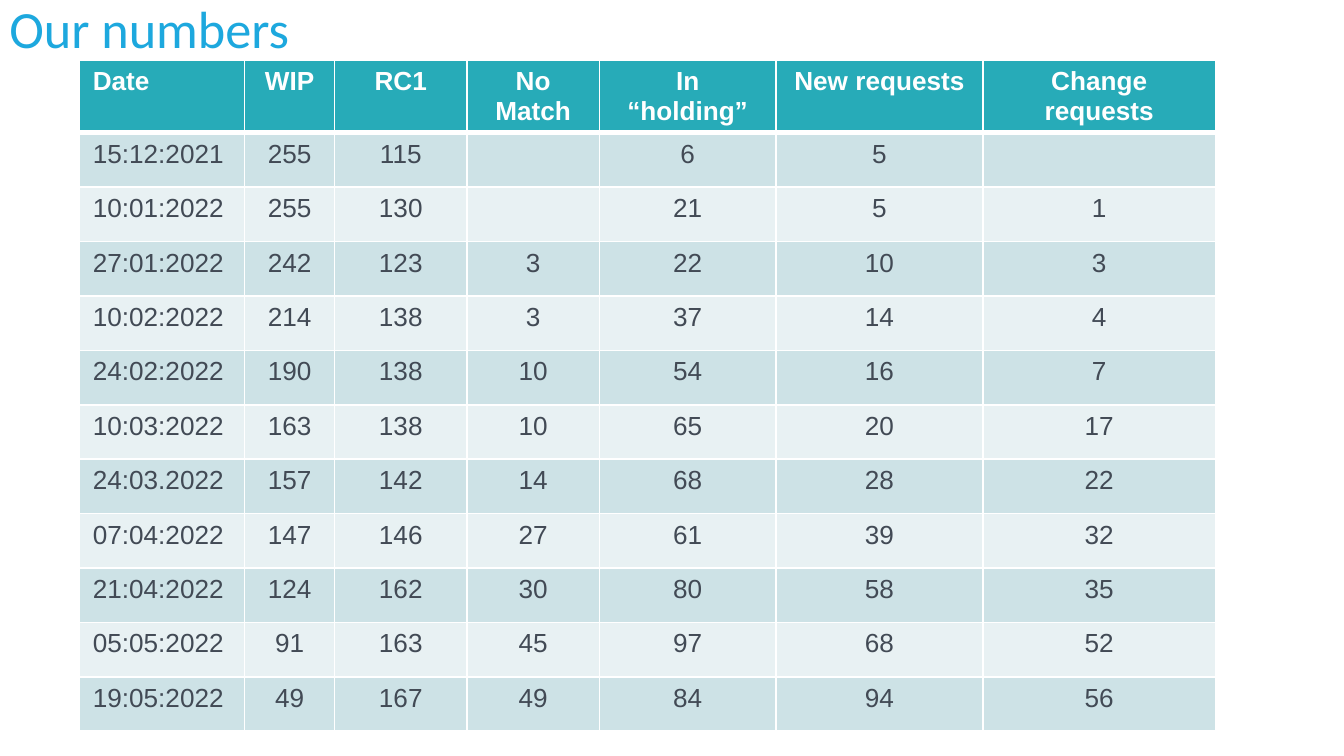
import pptx
import pptx.dml.color
import pptx.enum.text
import pptx.oxml
import pptx.oxml.ns
import pptx.util

COLORS = {
    "title": "1DA8DE",
    "header": "27ABB8",
    "odd": "CDE2E6",
    "even": "E8F1F3",
    "text": "424A55",
    "white": "FFFFFF",
}
HEADINGS = ["Date", "WIP", "RC1", "No Match", "In “holding”", "New requests", "Change requests"]
COUNTS = [
    ["15:12:2021", 255, 115, "", 6, 5, ""],
    ["10:01:2022", 255, 130, "", 21, 5, 1],
    ["27:01:2022", 242, 123, 3, 22, 10, 3],
    ["10:02:2022", 214, 138, 3, 37, 14, 4],
    ["24:02:2022", 190, 138, 10, 54, 16, 7],
    ["10:03:2022", 163, 138, 10, 65, 20, 17],
    ["24:03.2022", 157, 142, 14, 68, 28, 22],
    ["07:04:2022", 147, 146, 27, 61, 39, 32],
    ["21:04:2022", 124, 162, 30, 80, 58, 35],
    ["05:05:2022", 91, 163, 45, 97, 68, 52],
    ["19:05:2022", 49, 167, 49, 84, 94, 56],
]
COLUMN_SHARES = [0.123, 0.067, 0.0985, 0.0985, 0.1315, 0.154, 0.173]
ROW_SHARE = 0.072


def write(para, text, color, **formats):
    span = para.add_run()
    span.text = str(text)
    for name, value in formats.items():
        setattr(span.font, name, value)
    span.font.color.rgb = pptx.dml.color.RGBColor.from_string(COLORS[color])


def add_border(cell, side, points):
    line = pptx.oxml.parse_xml(
        f'<a:ln{side} {pptx.oxml.ns.nsdecls("a")} w="{pptx.util.Pt(points)}">'
        f'<a:solidFill><a:srgbClr val="{COLORS["white"]}"/></a:solidFill></a:ln{side}>'
    )
    cell._tc.get_or_add_tcPr().append(line)


deck = pptx.Presentation()
deck.slide_width = pptx.util.Inches(10)
deck.slide_height = deck.slide_width * 9 // 16
width, height = deck.slide_width, deck.slide_height
page = deck.slides.add_slide(deck.slide_layouts[5])

title = page.shapes.title
title_place = {
    "left": 0,
    "top": int(height * -0.023),
    "width": int(width * 0.862),
    "height": int(height * 0.13),
}
for name, value in title_place.items():
    setattr(title, name, value)
title_frame = {
    "margin_left": pptx.util.Inches(0.07),
    "margin_right": pptx.util.Inches(0.07),
    "margin_top": pptx.util.Inches(0.04),
    "margin_bottom": pptx.util.Inches(0.04),
    "vertical_anchor": pptx.enum.text.MSO_ANCHOR.MIDDLE,
    "auto_size": pptx.enum.text.MSO_AUTO_SIZE.NONE,
    "word_wrap": True,
}
for name, value in title_frame.items():
    setattr(title.text_frame, name, value)
para = title.text_frame.paragraphs[0]
para.alignment = pptx.enum.text.PP_ALIGN.LEFT
para.line_spacing = 0.9
write(para, "Our numbers", "title", name="Calibri", size=pptx.util.Pt(28))

rows = [HEADINGS] + COUNTS
table = page.shapes.add_table(
    len(rows),
    len(HEADINGS),
    int(width * 0.059),
    int(height * 0.08),
    int(width * sum(COLUMN_SHARES)),
    int(height * ROW_SHARE * len(rows)),
).table
for column, share in zip(table.columns, COLUMN_SHARES):
    column.width = int(width * share)

for row_index, values in enumerate(rows):
    table.rows[row_index].height = int(height * ROW_SHARE)
    is_header = row_index == 0
    fill = "header" if is_header else ("even", "odd")[row_index % 2]
    borders = {"L": 1, "R": 1, "T": 3 if row_index == 1 else 1, "B": 3 if is_header else 1}
    for column_index, value in enumerate(values):
        cell = table.cell(row_index, column_index)
        for side, points in borders.items():
            add_border(cell, side, points)
        cell.fill.solid()
        cell.fill.fore_color.rgb = pptx.dml.color.RGBColor.from_string(COLORS[fill])
        if value == "":
            continue
        para = cell.text_frame.paragraphs[0]
        if column_index:
            para.alignment = pptx.enum.text.PP_ALIGN.CENTER
        color = "white" if is_header else "text"
        write(para, value, color, name="Arial", size=pptx.util.Pt(14), bold=is_header)

deck.save("out.pptx")
